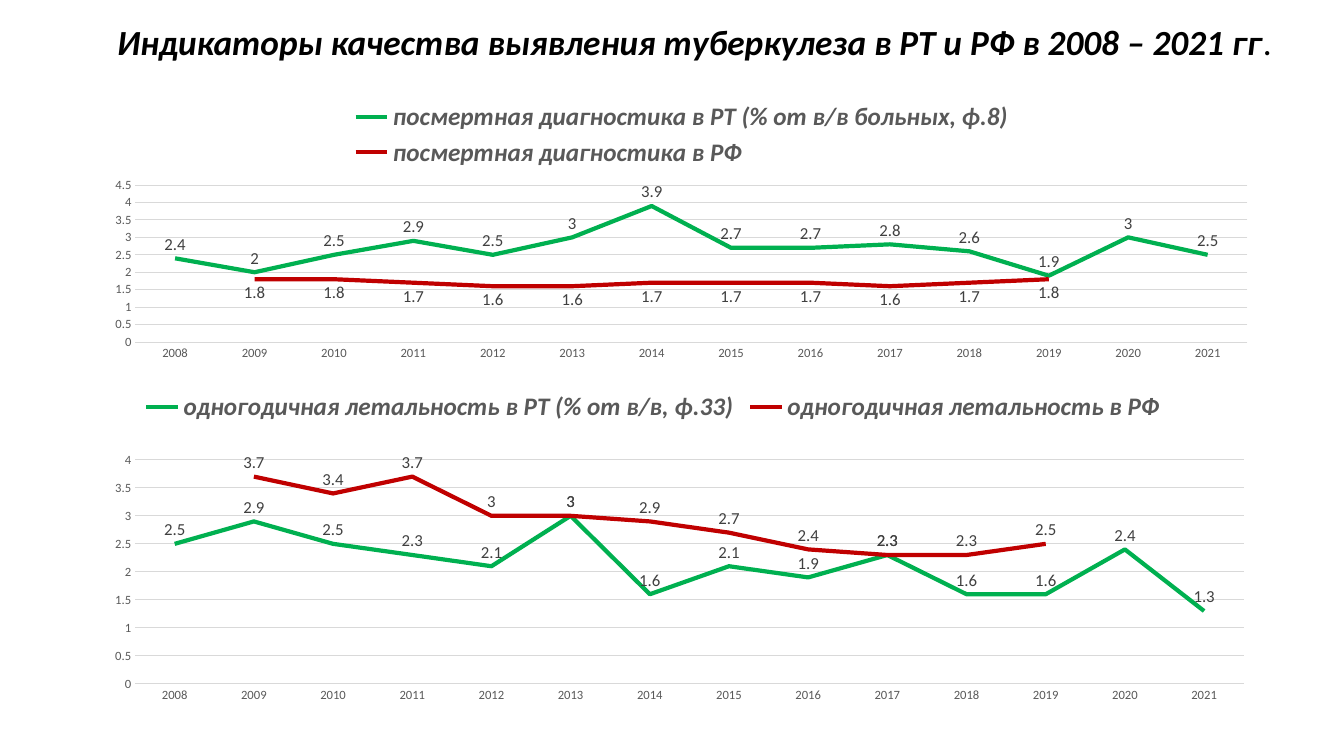
from dataclasses import dataclass
from typing import Any, NamedTuple

from pptx import Presentation
from pptx.chart.chart import Chart
from pptx.chart.data import CategoryChartData
from pptx.dml.color import RGBColor
from pptx.enum.chart import XL_CHART_TYPE, XL_LABEL_POSITION, XL_LEGEND_POSITION, XL_TICK_MARK
from pptx.enum.text import MSO_ANCHOR, PP_ALIGN
from pptx.oxml import parse_xml
from pptx.oxml.ns import nsdecls, qn
from pptx.slide import Slide
from pptx.util import Emu, Pt

LINE_CHART = XL_CHART_TYPE.LINE
ABOVE, BELOW = XL_LABEL_POSITION.ABOVE, XL_LABEL_POSITION.BELOW
LEGEND_TOP = XL_LEGEND_POSITION.TOP
NO_TICK = XL_TICK_MARK.NONE
MIDDLE, CENTER = MSO_ANCHOR.MIDDLE, PP_ALIGN.CENTER

SLIDE_WIDTH, SLIDE_HEIGHT = 1344, 756
EMU_PER_PX = 12192000 / SLIDE_WIDTH


@dataclass(frozen=True)
class Theme:
    font: str = "Calibri"
    black: str = "000000"
    axis_text: str = "595959"
    label_text: str = "404040"
    grid: str = "D9D9D9"
    tatarstan: str = "00B050"
    russia: str = "C00000"
    title_size: float = 25.2
    legend_size: float = 18
    label_size: float = 12
    axis_size: float = 9
    series_width: float = 3
    grid_width: float = 0.75


THEME = Theme()


class Box(NamedTuple):
    left: int
    top: int
    width: int
    height: int

    def emu(self) -> list[Emu]:
        return [px(side) for side in self]


class Series(NamedTuple):
    name: str
    values: list[float | None]
    color: str
    label_position: Any


class Indicator(NamedTuple):
    frame: Box
    plot: Box
    axis_max: float
    series: list[Series]


TITLE = "Индикаторы качества выявления туберкулеза в РТ и РФ в 2008 – 2021 гг"
TITLE_BOX = Box(46, 13, 1297, 62)
YEARS = [str(year) for year in range(2008, 2022)]

INDICATORS = [
    Indicator(Box(93, 89, 1178, 277), Box(135, 185, 1112, 157), 4.5, [
        Series("посмертная диагностика в РТ (% от в/в больных, ф.8)",
               [2.4, 2, 2.5, 2.9, 2.5, 3, 3.9, 2.7, 2.7, 2.8, 2.6, 1.9, 3, 2.5],
               THEME.tatarstan, ABOVE),
        Series("посмертная диагностика в РФ",
               [None, 1.8, 1.8, 1.7, 1.6, 1.6, 1.7, 1.7, 1.7, 1.6, 1.7, 1.8, None, None],
               THEME.russia, BELOW),
    ]),
    Indicator(Box(35, 379, 1236, 337), Box(135, 460, 1109, 224), 4, [
        Series("одногодичная летальность в РТ (% от в/в, ф.33)",
               [2.5, 2.9, 2.5, 2.3, 2.1, 3, 1.6, 2.1, 1.9, 2.3, 1.6, 1.6, 2.4, 1.3],
               THEME.tatarstan, ABOVE),
        Series("одногодичная летальность в РФ",
               [None, 3.7, 3.4, 3.7, 3, 3, 2.9, 2.7, 2.4, 2.3, 2.3, 2.5, None, None],
               THEME.russia, ABOVE),
    ]),
]


def px(length: int) -> Emu:
    return Emu(round(length * EMU_PER_PX))


def set_all(target: Any, values: dict[str, Any]) -> None:
    for attribute, value in values.items():
        setattr(target, attribute, value)


def style_font(font: Any, size: float, color: str, emphasis: bool = False) -> None:
    """Emphasis is bold italic."""
    set_all(font, {"name": THEME.font, "size": Pt(size), "bold": emphasis, "italic": emphasis})
    font.color.rgb = RGBColor.from_string(color)


def style_line(line: Any, color: str, width: float) -> None:
    line.color.rgb = RGBColor.from_string(color)
    line.width = Pt(width)


def add_title(slide: Slide) -> None:
    frame = slide.shapes.add_textbox(*TITLE_BOX.emu()).text_frame
    set_all(frame, {"word_wrap": True, "vertical_anchor": MIDDLE})
    heading = frame.paragraphs[0]
    set_all(heading, {"alignment": CENTER, "line_spacing": 0.9})
    for text, emphasis in ((TITLE, True), (".", False)):
        run = heading.add_run()
        run.text = text
        style_font(run.font, THEME.title_size, THEME.black, emphasis)


def place_plot(chart: Chart, frame: Box, plot: Box) -> None:
    """Fix the inner plot area, given in slide px, inside the chart frame."""
    shares = {
        "x": (plot.left - frame.left) / frame.width,
        "y": (plot.top - frame.top) / frame.height,
        "w": plot.width / frame.width,
        "h": plot.height / frame.height,
    }
    modes = "".join(f'<c:{axis}Mode val="edge"/>' for axis in "xy")
    sides = "".join(f'<c:{side} val="{share:.3f}"/>' for side, share in shares.items())
    area = chart.element.find(".//" + qn("c:plotArea"))
    for layout in area.findall(qn("c:layout")):
        area.remove(layout)
    area.insert(0, parse_xml(
        f'<c:layout {nsdecls("c")}><c:manualLayout><c:layoutTarget val="inner"/>'
        f"{modes}{sides}</c:manualLayout></c:layout>"))


def style_axes(chart: Chart, axis_max: float) -> None:
    years, rates = chart.category_axis, chart.value_axis
    for axis in (years, rates):
        set_all(axis, {"major_tick_mark": NO_TICK, "minor_tick_mark": NO_TICK})
        style_font(axis.tick_labels.font, THEME.axis_size, THEME.axis_text)
    style_line(years.format.line, THEME.grid, THEME.grid_width)
    rates.format.line.fill.background()
    set_all(rates, {"minimum_scale": 0, "maximum_scale": axis_max,
                    "major_unit": 0.5, "has_major_gridlines": True})
    style_line(rates.major_gridlines.format.line, THEME.grid, THEME.grid_width)


def add_indicator(slide: Slide, indicator: Indicator) -> None:
    data = CategoryChartData()
    data.categories = YEARS
    for series in indicator.series:
        data.add_series(series.name, series.values)
    chart = slide.shapes.add_chart(LINE_CHART, *indicator.frame.emu(), data).chart
    set_all(chart, {"has_title": False, "has_legend": True})
    style_font(chart.font, THEME.axis_size, THEME.black)
    set_all(chart.legend, {"position": LEGEND_TOP, "include_in_layout": False})
    style_font(chart.legend.font, THEME.legend_size, THEME.axis_text, emphasis=True)
    style_axes(chart, indicator.axis_max)
    place_plot(chart, indicator.frame, indicator.plot)
    chart.plots[0].vary_by_categories = False
    for curve, series in zip(chart.plots[0].series, indicator.series):
        curve.smooth = False
        style_line(curve.format.line, series.color, THEME.series_width)
        labels = curve.data_labels
        set_all(labels, {"show_value": True, "position": series.label_position})
        style_font(labels.font, THEME.label_size, THEME.label_text)


def main() -> None:
    presentation = Presentation()
    set_all(presentation, {"slide_width": px(SLIDE_WIDTH), "slide_height": px(SLIDE_HEIGHT)})
    slide = presentation.slides.add_slide(presentation.slide_layouts[6])
    add_title(slide)
    for indicator in INDICATORS:
        add_indicator(slide, indicator)
    presentation.save("out.pptx")


if __name__ == "__main__":
    main()
